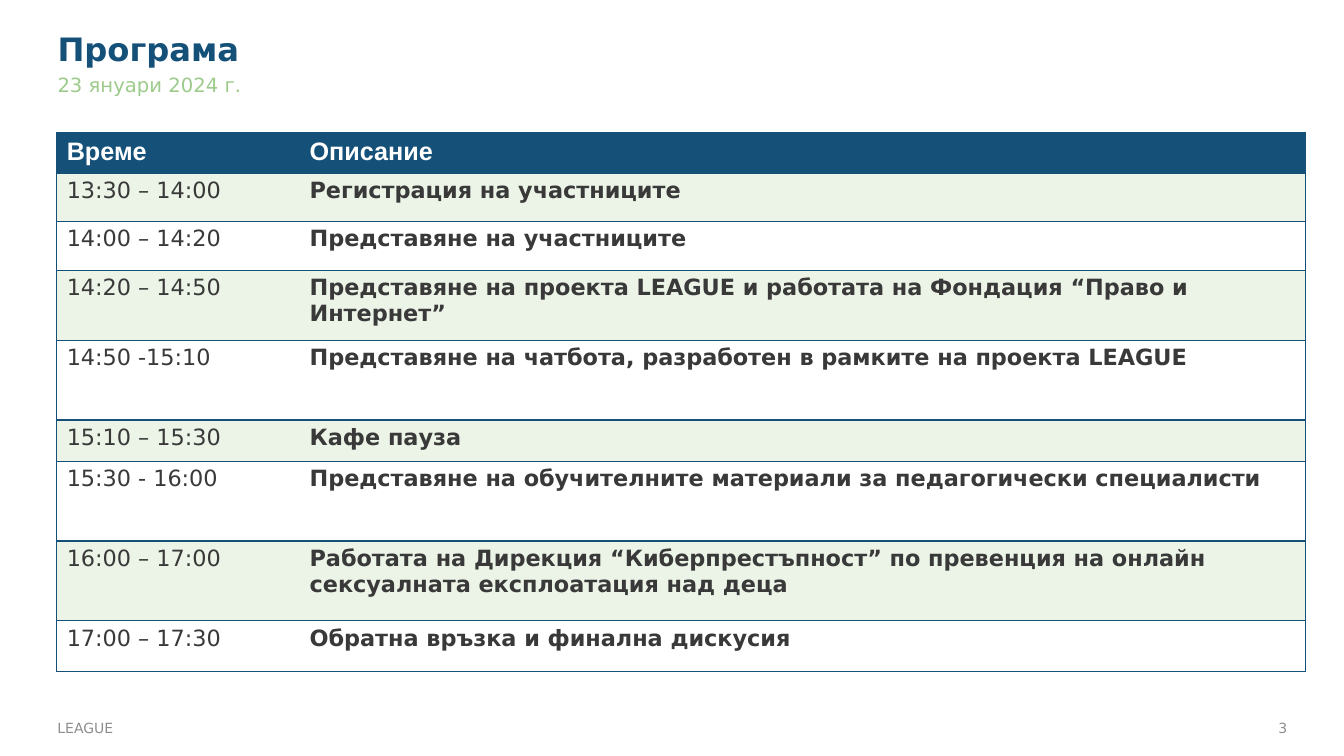
from lxml import etree
from pptx import Presentation
from pptx.dml.color import RGBColor
from pptx.enum.text import MSO_ANCHOR, PP_ALIGN
from pptx.oxml.ns import qn
from pptx.util import Pt

LEFT, RIGHT, JUSTIFY = PP_ALIGN.LEFT, PP_ALIGN.RIGHT, PP_ALIGN.JUSTIFY
MIDDLE = MSO_ANCHOR.MIDDLE
NAVY, GREEN, PALE_GREEN = "155079", "9DCB8B", "EBF4E7"
WHITE, DARK, GREY = "FFFFFF", "393939", "8E8E8E"
BODY_FONT, HEADER_FONT = "DejaVu Sans", "Arial"

HEADER = ("Време", "Описание")
HEADER_HEIGHT = 29
COLUMN_WIDTHS = (173.5, 718.5)
PROGRAMME = [
    ("13:30 – 14:00", "Регистрация на участниците", 34.5, LEFT),
    ("14:00 – 14:20", "Представяне на участниците", 35, LEFT),
    ("14:20 – 14:50", "Представяне на проекта LEAGUE и работата на Фондация “Право и Интернет”", 50, LEFT),
    ("14:50 -15:10", "Представяне на чатбота, разработен в рамките на проекта LEAGUE", 57, JUSTIFY),
    ("15:10 – 15:30", "Кафе пауза", 29.5, LEFT),
    ("15:30 - 16:00", "Представяне на обучителните материали за педагогически специалисти", 57, LEFT),
    ("16:00 – 17:00", "Работата на Дирекция “Киберпрестъпност” по превенция на онлайн "
     "сексуалната експлоатация над деца", 57, LEFT),
    ("17:00 – 17:30", "Обратна връзка и финална дискусия", 36.5, LEFT),
]


def color(value):
    """Turn a hex string into a colour."""
    return RGBColor.from_string(value)


def style_paragraph(para, size, ink, bold=False, font=BODY_FONT, align=LEFT):
    """Set the font and alignment of a paragraph."""
    para.alignment = align
    para.font.name = font
    para.font.size = Pt(size)
    para.font.bold = bold
    para.font.color.rgb = color(ink)


def add_text(page, text, left, top, width, height, size, ink, inset=0, spacing=1.0, **style):
    """Add a one-line text box centred vertically."""
    box = page.shapes.add_textbox(Pt(left), Pt(top), Pt(width), Pt(height))
    frame = box.text_frame
    frame.word_wrap = True
    frame.vertical_anchor = MIDDLE
    frame.margin_top = frame.margin_bottom = Pt(inset)
    para = frame.paragraphs[0]
    para.text = text
    para.line_spacing = spacing
    style_paragraph(para, size, ink, **style)


def set_borders(cell, open_side):
    """Draw navy borders on every side of a cell but one."""
    properties = cell._tc.get_or_add_tcPr()
    for side in ("lnL", "lnR", "lnT", "lnB"):
        line = etree.SubElement(properties, qn(f"a:{side}"), w=str(Pt(1)))
        if side == open_side:
            etree.SubElement(line, qn("a:noFill"))
        else:
            fill = etree.SubElement(line, qn("a:solidFill"))
            etree.SubElement(fill, qn("a:srgbClr"), val=NAVY)


def fill_row(table, index, texts, height, fill, styles):
    """Set the height, texts, borders and fill of a table row."""
    table.rows[index].height = Pt(height)
    for column, (text, style) in enumerate(zip(texts, styles)):
        cell = table.cell(index, column)
        set_borders(cell, "lnL" if column else "lnR")
        cell.fill.solid()
        cell.fill.fore_color.rgb = color(fill)
        cell.text = text
        style_paragraph(cell.text_frame.paragraphs[0], **style)


def add_programme(page, left, top):
    """Add the programme table with alternating row fills."""
    height = HEADER_HEIGHT + sum(entry[2] for entry in PROGRAMME)
    frame = page.shapes.add_table(len(PROGRAMME) + 1, len(COLUMN_WIDTHS), Pt(left), Pt(top),
                                  Pt(sum(COLUMN_WIDTHS)), Pt(height))
    table = frame.table
    for column, width in zip(table.columns, COLUMN_WIDTHS):
        column.width = Pt(width)
    header_style = dict(size=18, ink=WHITE, bold=True, font=HEADER_FONT)
    fill_row(table, 0, HEADER, HEADER_HEIGHT, NAVY, [header_style] * len(HEADER))
    for index, (time, description, row_height, align) in enumerate(PROGRAMME, start=1):
        styles = [dict(size=16, ink=DARK), dict(size=16, ink=DARK, bold=True, align=align)]
        fill = PALE_GREEN if index % 2 else WHITE
        fill_row(table, index, (time, description), row_height, fill, styles)


def main():
    """Build the programme slide and save it."""
    deck = Presentation()
    deck.slide_width, deck.slide_height = Pt(960), Pt(540)
    page = deck.slides.add_slide(deck.slide_layouts[6])
    add_text(page, "Програма", 34, 21.5, 733, 30, 23, NAVY, spacing=0.9, bold=True)
    add_text(page, "23 януари 2024 г.", 34, 52.5, 733, 18, 14, GREEN, spacing=0.9)
    add_programme(page, 40.5, 94.5)
    add_text(page, "LEAGUE", 34, 511, 833, 18, 10, GREY, inset=3.6)
    add_text(page, "3", 872.5, 511, 54, 18, 10, GREY, inset=3.6, align=RIGHT)
    deck.save("out.pptx")


if __name__ == "__main__":
    main()
